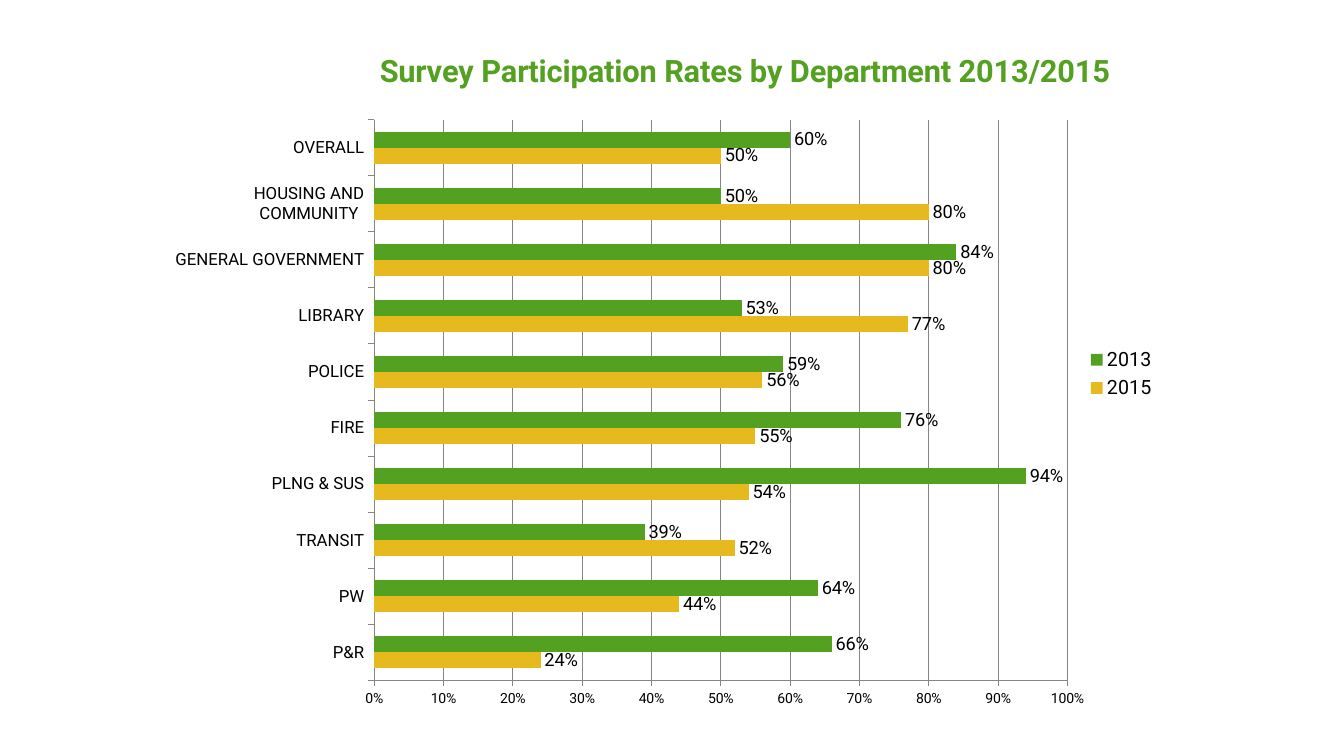
from dataclasses import dataclass

from lxml import etree
from pptx import Presentation
from pptx.chart.chart import Chart
from pptx.chart.data import CategoryChartData
from pptx.dml.color import RGBColor
from pptx.enum.chart import (XL_CHART_TYPE, XL_LABEL_POSITION,
                             XL_LEGEND_POSITION, XL_TICK_MARK)
from pptx.oxml.ns import qn
from pptx.text.text import Font, TextFrame
from pptx.util import Inches, Pt

GREEN = RGBColor(0x54, 0xA0, 0x21)
GOLD = RGBColor(0xE6, 0xB9, 0x1E)
BLACK = RGBColor(0x00, 0x00, 0x00)
GRAY = RGBColor(0x86, 0x86, 0x86)
FONT_NAME = "Roboto"

DEPARTMENTS = ["P&R", "PW", "TRANSIT", "PLNG & SUS", "FIRE", "POLICE", "LIBRARY",
               "GENERAL GOVERNMENT", "HOUSING AND COMMUNITY", "OVERALL"]


@dataclass(frozen=True)
class SurveyYear:
    name: str
    rates: tuple[float, ...]
    color: RGBColor


SURVEY_YEARS = [
    SurveyYear("2015", (0.24, 0.44, 0.52, 0.54, 0.55, 0.56, 0.77, 0.8, 0.8, 0.5), GOLD),
    SurveyYear("2013", (0.66, 0.64, 0.39, 0.94, 0.76, 0.59, 0.53, 0.84, 0.5, 0.6), GREEN),
]


def style_font(font: Font, size: float, color: RGBColor = BLACK, bold: bool = False) -> None:
    font.name = FONT_NAME
    font.size = Pt(size)
    font.bold = bold
    font.color.rgb = color


def write_text(frame: TextFrame, text: str, *, size: float, color: RGBColor = BLACK,
               bold: bool = False) -> None:
    run = frame.paragraphs[0].add_run()
    run.text = text
    style_font(run.font, size, color, bold)


def set_layout(parent: etree._Element, **values: str | float) -> None:
    """Give a chart part a manual layout, in fractions of the chart."""
    layout = parent.find(qn("c:layout"))
    if layout is None:
        layout = etree.Element(qn("c:layout"))
        parent.insert(0, layout)
    manual = etree.SubElement(layout, qn("c:manualLayout"))
    for tag, value in values.items():
        etree.SubElement(manual, qn(f"c:{tag}")).set("val", str(value))


def add_title(chart: Chart, text: str) -> None:
    chart.has_title = True
    write_text(chart.chart_title.text_frame, text, size=22, color=GREEN, bold=True)
    title = chart.chart_title._element
    set_layout(title, xMode="edge", yMode="edge", x=0.2, y=0.06)
    title.find(qn("c:overlay")).set("val", "1")


def style_axes(chart: Chart) -> None:
    for axis, size in ((chart.category_axis, 12), (chart.value_axis, 10)):
        axis.major_tick_mark = XL_TICK_MARK.OUTSIDE
        axis.minor_tick_mark = XL_TICK_MARK.NONE
        axis.format.line.color.rgb = GRAY
        style_font(axis.tick_labels.font, size)
    rate_axis = chart.value_axis
    rate_axis.minimum_scale, rate_axis.maximum_scale, rate_axis.major_unit = 0, 1, 0.1
    rate_axis.has_major_gridlines = True
    rate_axis.major_gridlines.format.line.color.rgb = GRAY
    rate_axis.tick_labels.number_format = "0%"
    rate_axis.tick_labels.number_format_is_linked = False


def style_bars(chart: Chart) -> None:
    plot = chart.plots[0]
    plot.gap_width = 150
    plot.vary_by_categories = False
    for bars, year in zip(plot.series, SURVEY_YEARS):
        bars.format.fill.solid()
        bars.format.fill.fore_color.rgb = year.color
        labels = bars.data_labels
        labels.show_value = True
        labels.number_format = "0%"
        labels.number_format_is_linked = False
        labels.position = XL_LABEL_POSITION.OUTSIDE_END
        style_font(labels.font, 13)


def main() -> None:
    deck = Presentation()
    deck.slide_width, deck.slide_height = Inches(13.33), Inches(7.5)
    slide = deck.slides.add_slide(deck.slide_layouts[6])

    # Participation data
    participation = CategoryChartData(number_format="0%")
    participation.categories = DEPARTMENTS
    for year in SURVEY_YEARS:
        participation.add_series(year.name, year.rates)

    # Bar chart
    chart = slide.shapes.add_chart(
        XL_CHART_TYPE.BAR_CLUSTERED, Inches(1.74), Inches(0),
        Inches(9.83), Inches(7.42), participation).chart
    style_font(chart.font, 10)
    add_title(chart, "Survey Participation Rates by Department 2013/2015")
    style_axes(chart)
    style_bars(chart)
    plot_area = chart._chartSpace.chart.plotArea
    set_layout(plot_area, layoutTarget="inner", xMode="edge", yMode="edge",
               x=0.2, y=0.16, w=0.7, h=0.75)

    # Legend
    chart.has_legend = True
    chart.legend.position = XL_LEGEND_POSITION.RIGHT
    chart.legend.include_in_layout = False
    style_font(chart.legend.font, 14)

    deck.save("out.pptx")


if __name__ == "__main__":
    main()
